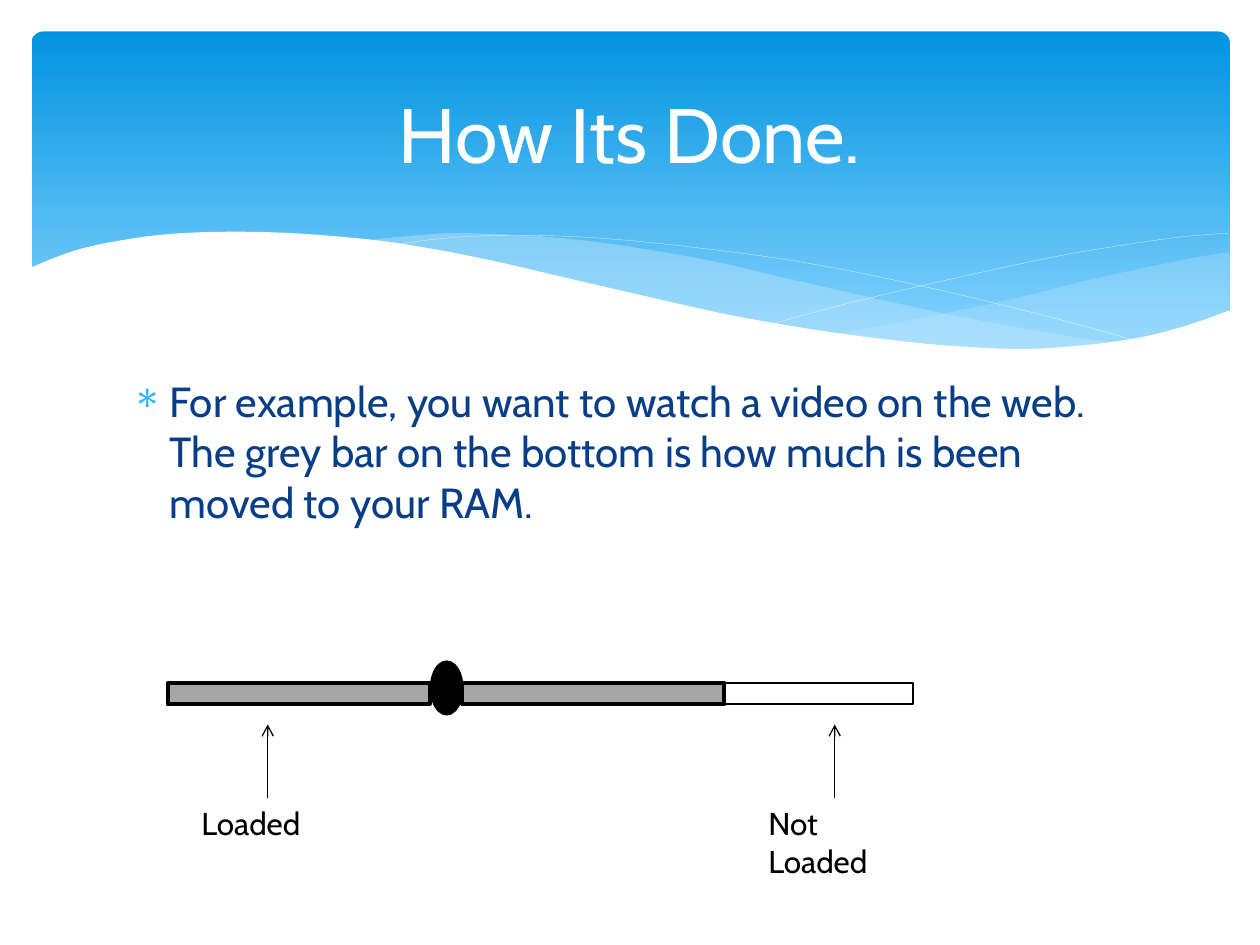
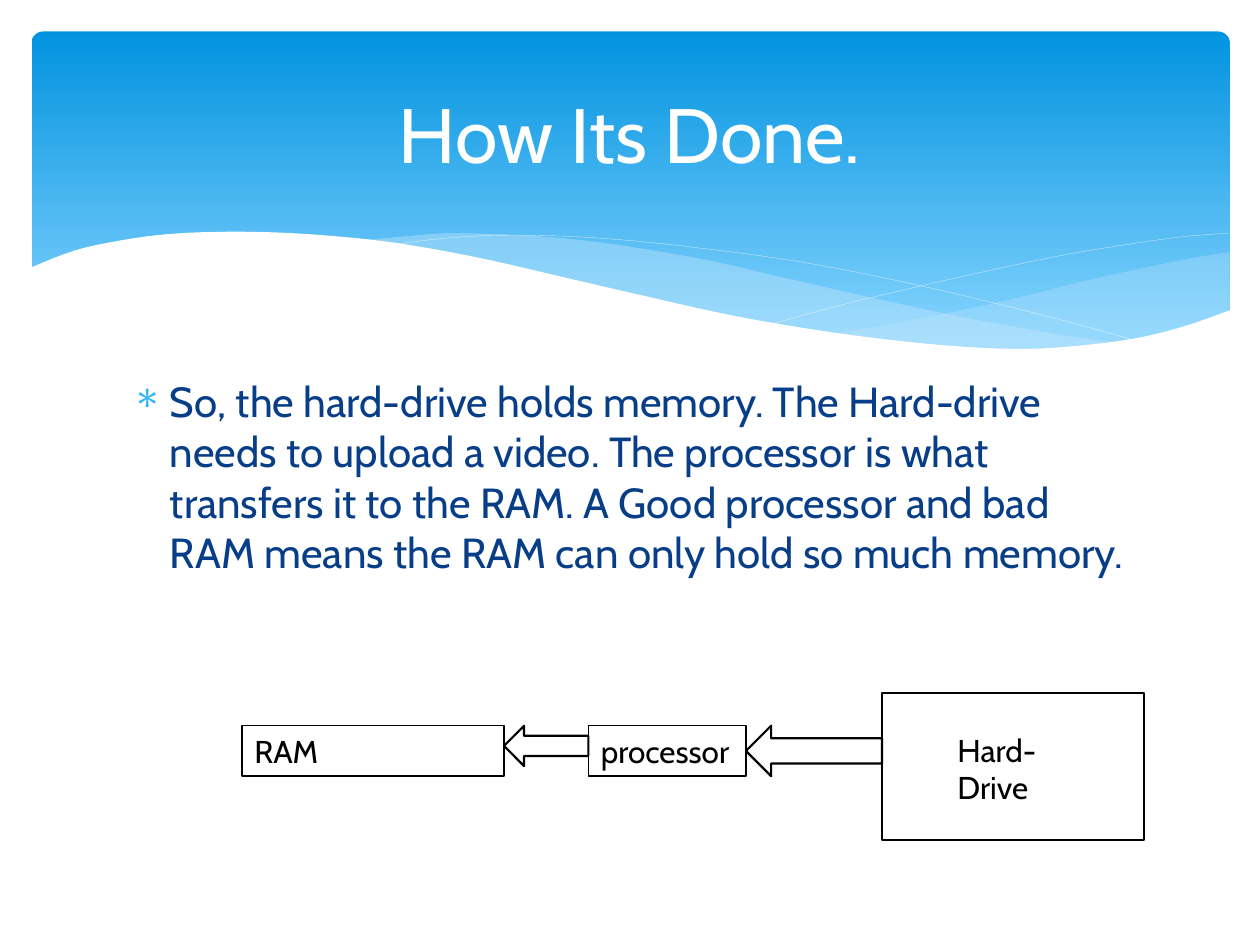
import pptx
import pptx.dml.color
import pptx.enum.shapes
import pptx.enum.text
import pptx.oxml
import pptx.util
from lxml import etree

Inches = pptx.util.Inches
Pt = pptx.util.Pt
SHAPES = pptx.enum.shapes.MSO_SHAPE
FONT = "Cabin"
WHITE, BLACK, GREY = "FFFFFF", "000000", "A6A6A6"
SKY_DARK, SKY_LIGHT, MIST = "0293E0", "83D3FE", "C6E7FC"
NAVY, BULLET_BLUE = "073E87", "31B6FD"
TITLE = "How Its Done."

WAVE_EDGE = [(9.77, 2.46), (9.4, 2.59), (8.99, 2.69), (8.5, 2.75), (8.09, 2.77),
             (7.61, 2.75), (7.08, 2.7), (6.48, 2.62), (5.79, 2.5), (5.03, 2.33),
             (4.47, 2.2), (3.91, 2.07), (3.4, 1.97), (2.92, 1.9), (2.3, 1.85),
             (1.77, 1.84), (1.32, 1.86), (0.95, 1.91), (0.59, 1.99), (0.23, 2.13)]
RIGHT_CREST = [(9.76, 2), (9.35, 2.07), (8.61, 2.23), (8.05, 2.37), (7.29, 2.53), (6.61, 2.65)]
RIGHT_TROUGH = [(6.61, 2.65), (7.19, 2.72), (7.69, 2.77), (8.14, 2.78), (8.63, 2.75),
                (9.05, 2.69), (9.42, 2.59), (9.76, 2.47)]
LEFT_CREST = [(8.93, 2.73), (8.37, 2.65), (7.41, 2.47), (6.29, 2.22), (5.69, 2.08),
              (5.14, 1.98), (4.65, 1.91), (4.2, 1.87), (3.61, 1.85), (3.28, 1.87), (2.86, 1.91)]
LEFT_TROUGH = [(2.86, 1.91), (3.42, 1.99), (4.04, 2.11), (4.91, 2.32), (5.66, 2.48),
               (6.34, 2.61), (6.95, 2.7), (7.48, 2.76), (7.96, 2.78), (8.48, 2.77), (8.93, 2.73)]
FALLING_LINE = [(3.09, 1.95), (3.44, 1.9), (3.87, 1.87), (4.33, 1.87), (4.89, 1.9),
                (5.56, 1.97), (6.36, 2.08), (7.27, 2.26), (8.31, 2.51), (9.07, 2.72)]
RISING_LINE = [(6.13, 2.57), (6.72, 2.41), (7.48, 2.23), (8.36, 2.04), (8.95, 1.94),
               (9.38, 1.88), (9.75, 1.85)]


def color(value):
    """Turn a hex string into a colour."""
    return pptx.dml.color.RGBColor.from_string(value)


def paint(shape, fill=None, line=None, width=1.25):
    """Set fill and line, leaving out what is not given, and drop the shadow."""
    shape.shadow.inherit = False
    if fill:
        shape.fill.solid()
        shape.fill.fore_color.rgb = color(fill)
    else:
        shape.fill.background()
    if line:
        shape.line.color.rgb = color(line)
        shape.line.width = Pt(width)
    else:
        shape.line.fill.background()


def smooth(points, steps=5):
    """Return a Catmull-Rom curve through the points."""
    padded = [points[0], *points, points[-1]]
    curve = [points[0]]
    for a, b, c, d in zip(padded, padded[1:], padded[2:], padded[3:]):
        for step in range(1, steps + 1):
            t = step / steps
            curve.append(tuple(
                (2 * q + (r - p) * t + (2 * p - 5 * q + 4 * r - s) * t ** 2
                 + (3 * q - p - 3 * r + s) * t ** 3) / 2
                for p, q, r, s in zip(a, b, c, d)))
    return curve


def add_outline(slide, points, closed=True):
    """Add a freeform through points given in inches."""
    corners = [(Inches(x), Inches(y)) for x, y in points]
    builder = slide.shapes.build_freeform(*corners[0])
    builder.add_line_segments(corners[1:], close=closed)
    return builder.convert_to_shape()


def add_veil(slide, points, opacity):
    """Add a translucent wave with the given opacity in percent."""
    veil = add_outline(slide, points)
    paint(veil, MIST)
    tint = veil.element.spPr.find(".//" + pptx.oxml.ns.qn("a:srgbClr"))
    etree.SubElement(tint, pptx.oxml.ns.qn("a:alpha"), val=str(opacity * 1000))


def add_shape(slide, kind, left, top, width, height, fill=None, line=BLACK, weight=1.25):
    """Add a painted preset shape."""
    shape = slide.shapes.add_shape(
        kind, Inches(left), Inches(top), Inches(width), Inches(height))
    paint(shape, fill, line, weight)
    return shape


def build_backdrop(slide, layout):
    """Draw the blue wave band and hand it to the layout behind its placeholders."""
    band = add_shape(slide, SHAPES.ROUNDED_RECTANGLE, 0.25, 0.25, 9.51, 2.7, line=None)
    band.adjustments[0] = 0.034
    band.fill.gradient()
    band.fill.gradient_angle = 270
    for stop, shade, position in zip(band.fill.gradient_stops, (SKY_DARK, SKY_LIGHT), (0, 0.9)):
        stop.color.rgb = color(shade)
        stop.position = position
    add_veil(slide, smooth(RIGHT_CREST) + smooth(RIGHT_TROUGH), 29)
    add_veil(slide, smooth(LEFT_CREST) + smooth(LEFT_TROUGH), 40)
    for points in (FALLING_LINE, RISING_LINE):
        paint(add_outline(slide, smooth(points), closed=False), line=WHITE, width=0.1)
    paint(add_outline(slide, smooth(WAVE_EDGE) + [(0.23, 3.29), (9.77, 3.29)]), WHITE)
    drawn = [shape for shape in slide.shapes if not shape.is_placeholder]
    for index, shape in enumerate(drawn, start=2):
        layout.shapes.element.insert(index, shape.element)


def write(shape, text, size=18, shade=BLACK, align=pptx.enum.text.PP_ALIGN.LEFT,
          anchor=pptx.enum.text.MSO_ANCHOR.TOP):
    """Put one formatted paragraph in a shape."""
    frame = shape.text_frame
    frame.text = text
    frame.word_wrap = True
    frame.vertical_anchor = anchor
    para = frame.paragraphs[0]
    para.alignment = align
    span = para.runs[0]
    span.font.name = FONT
    span.font.size = Pt(size)
    span.font.color.rgb = color(shade)
    return para


def add_label(slide, text, left, top, width, height=0.4):
    """Add a plain text box."""
    box = slide.shapes.add_textbox(Inches(left), Inches(top), Inches(width), Inches(height))
    write(box, text)
    return box


def add_title(slide):
    """Place and format the shared title."""
    title = slide.shapes.title
    title.left, title.top, title.width, title.height = map(Inches, (0.5, 0.37, 9, 1.37))
    write(title, TITLE, 44, WHITE, pptx.enum.text.PP_ALIGN.CENTER,
          pptx.enum.text.MSO_ANCHOR.MIDDLE)


def add_bullet(slide, text, height):
    """Add the body statement with its asterisk bullet."""
    box = slide.shapes.add_textbox(Inches(0.95), Inches(2.93), Inches(8.1), Inches(height))
    para = write(box, text, 24, NAVY)
    para.space_before = Pt(4.8)
    properties = para._p.get_or_add_pPr()
    properties.set("marL", str(Inches(0.3)))
    properties.set("indent", str(Inches(-0.3)))
    qn = pptx.oxml.ns.qn
    tint = etree.SubElement(properties, qn("a:buClr"))
    etree.SubElement(tint, qn("a:srgbClr"), val=BULLET_BLUE)
    etree.SubElement(properties, qn("a:buChar"), char="∗")


def add_pointer(slide, label):
    """Draw an upward arrow from the top of a label."""
    x = label.left + label.width // 2
    arrow = slide.shapes.add_connector(
        pptx.enum.shapes.MSO_CONNECTOR.STRAIGHT, x, label.top, x, Inches(5.75))
    arrow.begin_connect(label, 0)
    arrow.line.color.rgb = color(BLACK)
    arrow.line.width = Pt(0.75)
    qn = pptx.oxml.ns.qn
    etree.SubElement(arrow.line._get_or_add_ln(), qn("a:tailEnd"), type="arrow")
    etree.SubElement(arrow.element.spPr, qn("a:effectLst"))


def build_loading_slide(slide):
    """Show a video progress bar with its loaded and unloaded parts."""
    add_bullet(slide, "For example, you want to watch a video on the web. The grey bar on "
               "the bottom is how much is been moved to your RAM.", 1.41)
    add_title(slide)
    for left, width, fill, weight in ((1.33, 2.08, GREY, 2.25), (3.67, 2.08, GREY, 2.25),
                                      (5.75, 1.5, WHITE, 1.25)):
        add_shape(slide, SHAPES.RECTANGLE, left, 5.42, width, 0.17, fill, weight=weight)
    add_shape(slide, SHAPES.OVAL, 3.42, 5.25, 0.25, 0.42, BLACK)
    for text, left, height in (("Loaded", 1.5, 0.4), ("Not Loaded", 6, 0.71)):
        add_pointer(slide, add_label(slide, text, left, 6.33, 1.25, height))


def build_transfer_slide(slide):
    """Show data going from the hard drive through the processor to the RAM."""
    add_bullet(slide, "So, the hard-drive holds memory. The Hard-drive needs to upload a "
               "video. The processor is what transfers it to the RAM. A Good processor and "
               "bad RAM means the RAM can only hold so much memory.", 1.82)
    add_title(slide)
    add_shape(slide, SHAPES.RECTANGLE, 7, 5.5, 2.08, 1.17, WHITE)
    add_label(slide, "Hard-Drive", 7.5, 5.75, 1.33)
    for text, left, width in (("processor", 4.67, 1.25), ("RAM", 1.92, 2.08)):
        write(add_shape(slide, SHAPES.RECTANGLE, left, 5.76, width, 0.4, weight=0.75), text)
    for left, width, height in ((5.92, 1.08, 0.4), (4, 0.67, 0.32)):
        add_shape(slide, SHAPES.LEFT_ARROW, left, 5.76, width, height, WHITE)


def main():
    """Build and save the deck."""
    deck = pptx.Presentation()
    deck.slide_width, deck.slide_height = Inches(10), Inches(7.5)
    layout = deck.slide_layouts[5]
    pages = [deck.slides.add_slide(layout) for _ in range(2)]
    build_backdrop(pages[0], layout)
    build_loading_slide(pages[0])
    build_transfer_slide(pages[1])
    deck.save("out.pptx")


if __name__ == "__main__":
    main()
